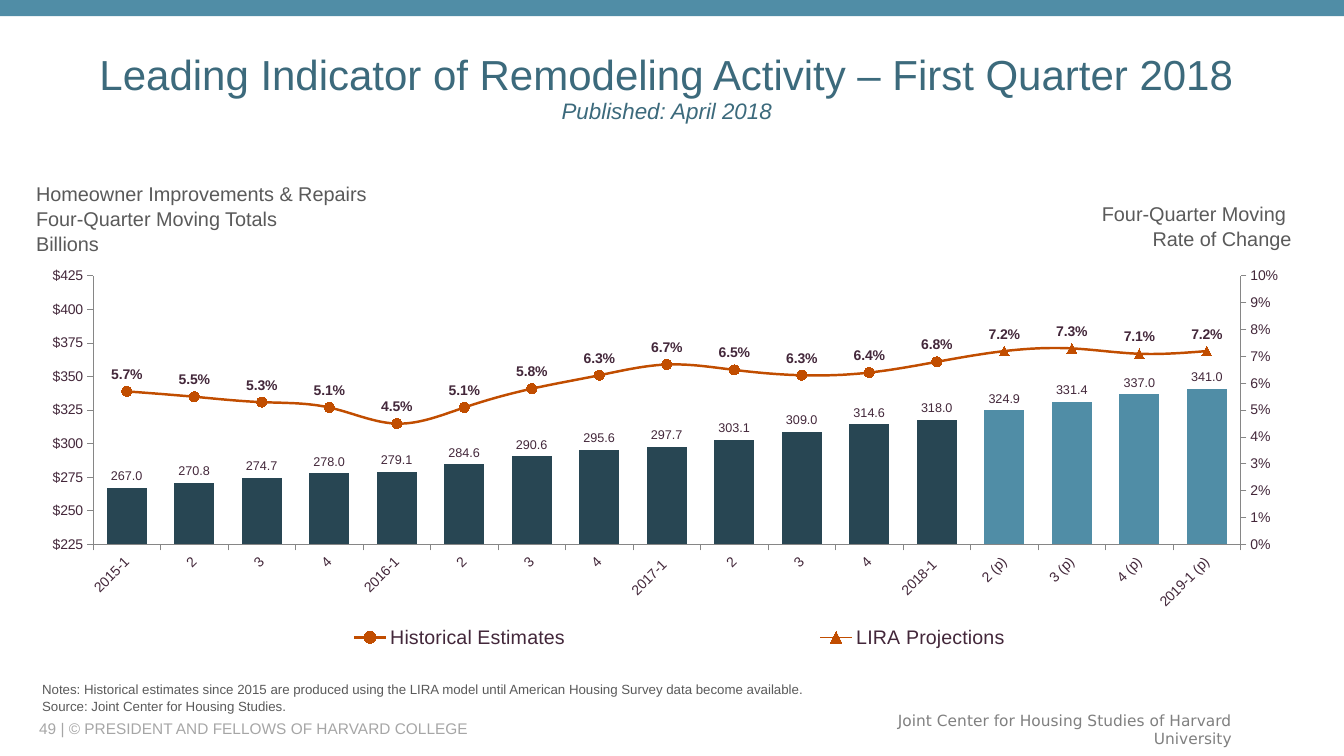
import copy
import dataclasses
import typing

import pptx
import pptx.chart.axis
import pptx.chart.chart
import pptx.chart.data
import pptx.dml.color
import pptx.enum.chart
import pptx.enum.shapes
import pptx.enum.text
import pptx.oxml
import pptx.oxml.ns
import pptx.slide
import pptx.text.text
import pptx.util

Pt = pptx.util.Pt
RGB = pptx.dml.color.RGBColor
qn = pptx.oxml.ns.qn
Align = pptx.enum.text.PP_ALIGN
Anchor = pptx.enum.text.MSO_ANCHOR
Mark = pptx.enum.chart.XL_MARKER_STYLE
Spot = pptx.enum.chart.XL_LABEL_POSITION

TEAL = RGB(0x50, 0x8D, 0xA6)
NAVY = RGB(0x28, 0x46, 0x53)
TITLE = RGB(0x3C, 0x6A, 0x7C)
RUST = RGB(0xC1, 0x4D, 0x00)
PLUM = RGB(0x43, 0x27, 0x3A)
SLATE = RGB(0x5A, 0x5A, 0x5A)
GRAY = RGB(0x80, 0x80, 0x80)
SILVER = RGB(0xA6, 0xA6, 0xA6)
AXIS = RGB(0x86, 0x86, 0x86)

QUARTERS = ["2015-1", "2", "3", "4", "2016-1", "2", "3", "4", "2017-1 ", "2", "3", "4",
            "2018-1 ", "2 (p)", "3 (p)", "4 (p)", "2019-1 (p)"]
TOTALS = [267, 270.8, 274.7, 278, 279.1, 284.6, 290.6, 295.6, 297.7, 303.1, 309, 314.6,
          318, 324.9, 331.4, 337, 341]
RATES = [0.057, 0.055, 0.053, 0.051, 0.045, 0.051, 0.058, 0.063, 0.067, 0.065, 0.063, 0.064,
         0.068, 0.072, 0.073, 0.071, 0.072]
PAST = 13
CHART_NS = 'xmlns:c="http://schemas.openxmlformats.org/drawingml/2006/chart"'


@dataclasses.dataclass
class Note:
    lines: list[str]
    left: float
    top: float
    width: float
    height: float
    size: float
    color: RGB = SLATE
    face: str = "Arial"
    align: Align = Align.LEFT
    anchor: Anchor = Anchor.TOP
    spacing: float = 1.05


NOTES = [
    Note(["49 | © PRESIDENT AND FELLOWS OF HARVARD COLLEGE"], 20.9, 513.4, 570, 14.4, 11,
         color=SILVER, anchor=Anchor.MIDDLE, spacing=1),
    Note(["Joint Center for Housing Studies of Harvard University"], 606.2, 510.5, 280.8, 20.9, 11,
         color=GRAY, face="DejaVu Sans", align=Align.RIGHT, anchor=Anchor.MIDDLE, spacing=1),
    Note(["Homeowner Improvements & Repairs", "Four-Quarter Moving Totals", "Billions"],
         18.7, 125.3, 355.7, 59, 14.2),
    Note(["Four-Quarter Moving ", "Rate of Change"], 709.2, 139.7, 220.3, 41.8, 14.2,
         align=Align.RIGHT),
    Note(["Notes: Historical estimates since 2015 are produced using the LIRA model until "
          "American Housing Survey data become available.",
          "Source: Joint Center for Housing Studies."], 23, 482.4, 820, 30.2, 9.5),
]


def style(font: pptx.text.text.Font, size: float, color: RGB = PLUM, face: str = "Arial",
          bold: bool = False, italic: bool = False) -> None:
    font.size, font.name, font.bold, font.italic = Pt(size), face, bold, italic
    font.color.rgb = color


def write(para: typing.Any, text: str, **form: typing.Any) -> None:
    run = para.add_run()
    run.text = text
    style(run.font, **form)


def add_note(slide: pptx.slide.Slide, note: Note) -> None:
    box = slide.shapes.add_textbox(Pt(note.left), Pt(note.top), Pt(note.width), Pt(note.height))
    frame = box.text_frame
    frame.word_wrap = True
    frame.vertical_anchor = note.anchor
    for i, line in enumerate(note.lines):
        para = frame.add_paragraph() if i else frame.paragraphs[0]
        para.alignment, para.line_spacing = note.align, note.spacing
        write(para, line, size=note.size, color=note.color, face=note.face)


def add_title(slide: pptx.slide.Slide) -> None:
    title = slide.shapes.title
    title.left, title.top, title.width, title.height = Pt(20.9), Pt(28.8), Pt(910.8), Pt(69.8)
    frame = title.text_frame
    frame.vertical_anchor = Anchor.MIDDLE
    para = frame.paragraphs[0]
    para.alignment, para.line_spacing = Align.CENTER, 0.9
    write(para, "Leading Indicator of Remodeling Activity – First Quarter 2018", size=30, color=TITLE)
    para.add_line_break()
    write(para, "Published: April 2018", size=16, color=TITLE, italic=True)


def place(parent: typing.Any, index: int, inner: bool, **box: float) -> None:
    for old in parent.findall(qn("c:layout")):
        parent.remove(old)
    target = '<c:layoutTarget val="inner"/>' if inner else ""
    modes = '<c:xMode val="edge"/><c:yMode val="edge"/>'
    sizes = "".join(f'<c:{key} val="{val}"/>' for key, val in box.items())
    parent.insert(index, pptx.oxml.parse_xml(
        f"<c:layout {CHART_NS}><c:manualLayout>{target}{modes}{sizes}</c:manualLayout></c:layout>"))


def set_scale(axis: pptx.chart.axis.ValueAxis, low: float, high: float, step: float,
              code: str) -> None:
    axis.minimum_scale, axis.maximum_scale, axis.major_unit = low, high, step
    axis.tick_labels.number_format = code
    axis.tick_labels.number_format_is_linked = False


def split_axes(chart: pptx.chart.chart.Chart) -> None:
    bars = chart.plots[0]._element
    cat, val = chart.category_axis._element, chart.value_axis._element
    cat_two, val_two = copy.deepcopy(cat), copy.deepcopy(val)
    for axis, own, cross in ((cat_two, "5001", "5002"), (val_two, "5002", "5001")):
        axis.find(qn("c:axId")).set("val", own)
        axis.find(qn("c:crossAx")).set("val", cross)
    val_two.find(qn("c:axPos")).set("val", "r")
    val_two.find(qn("c:crosses")).set("val", "max")
    val.addnext(cat_two)
    cat_two.addnext(val_two)
    pptx.chart.axis.CategoryAxis(cat_two).visible = False
    set_scale(pptx.chart.axis.ValueAxis(val_two), 0, 0.1, 0.01, "0%")
    lines = pptx.oxml.parse_xml(
        f'<c:lineChart {CHART_NS}><c:grouping val="standard"/><c:varyColors val="0"/>'
        '<c:marker val="1"/><c:axId val="5001"/><c:axId val="5002"/></c:lineChart>')
    for ser in bars.findall(qn("c:ser"))[1:]:
        for flag in ser.findall(qn("c:invertIfNegative")):
            ser.remove(flag)
        lines.find(qn("c:marker")).addprevious(ser)
    bars.addnext(lines)


def set_mark(marker: typing.Any, kind: Mark) -> None:
    marker.style, marker.size = kind, 7
    marker.format.fill.solid()
    marker.format.fill.fore_color.rgb = RUST
    marker.format.line.color.rgb = RUST


def add_labels(series: typing.Any, code: str, spot: Spot, **form: typing.Any) -> None:
    labels = series.data_labels
    labels.show_value = True
    labels.number_format, labels.number_format_is_linked = code, False
    labels.position = spot
    style(labels.font, **form)


def style_series(chart: pptx.chart.chart.Chart) -> None:
    columns, curves = chart.plots
    columns.gap_width, columns.vary_by_categories = 70, False
    totals = columns.series[0]
    totals.format.fill.solid()
    totals.format.fill.fore_color.rgb = NAVY
    for i in range(PAST, len(QUARTERS)):
        fill = totals.points[i].format.fill
        fill.solid()
        fill.fore_color.rgb = TEAL
    add_labels(totals, "#,##0.0", Spot.OUTSIDE_END, size=9)
    past, future = curves.series
    for series, kind, width in ((past, Mark.CIRCLE, 1.75), (future, Mark.TRIANGLE, 0.75)):
        series.smooth = True
        series.format.line.color.rgb = RUST
        series.format.line.width = Pt(width)
        set_mark(series.marker, kind)
    for i in range(len(QUARTERS)):
        if i < PAST:
            set_mark(future.points[i].marker, Mark.CIRCLE)
        else:
            past.points[i].marker.style = Mark.NONE
    add_labels(future, "0.0%", Spot.ABOVE, size=10, bold=True)


def add_graph(slide: pptx.slide.Slide) -> None:
    data = pptx.chart.data.CategoryChartData()
    data.categories = QUARTERS
    data.add_series("Series 1", TOTALS)
    data.add_series("Historical Estimates", RATES)
    data.add_series("LIRA Projections", RATES)
    kind = pptx.enum.chart.XL_CHART_TYPE.COLUMN_CLUSTERED
    chart = slide.shapes.add_chart(kind, Pt(20.9), Pt(185.8), Pt(910.8), Pt(282.2), data).chart
    chart.has_title = False
    style(chart.font, 12)
    for axis in (chart.category_axis, chart.value_axis):
        axis.has_major_gridlines = False
        axis.major_tick_mark = pptx.enum.chart.XL_TICK_MARK.OUTSIDE
        axis.format.line.color.rgb = AXIS
        style(axis.tick_labels.font, 10)
    set_scale(chart.value_axis, 225, 425, 25, '"$"#,##0')
    chart.category_axis._element.find(qn("c:txPr")).find(qn("a:bodyPr")).set("rot", "-2700000")
    split_axes(chart)
    style_series(chart)
    chart.has_legend = True
    legend = chart.legend
    legend.position = pptx.enum.chart.XL_LEGEND_POSITION.BOTTOM
    legend.include_in_layout = False
    style(legend.font, 14)
    legend._element.insert(1, pptx.oxml.parse_xml(
        f'<c:legendEntry {CHART_NS}><c:idx val="0"/><c:delete val="1"/></c:legendEntry>'))
    place(legend._element, 2, False, x=0.06, y=0.91, w=0.9, h=0.09)
    place(chart._chartSpace.chart.plotArea, 0, True, x=0.05, y=0.04, w=0.9, h=0.68)


def main() -> None:
    deck = pptx.Presentation()
    deck.slide_width, deck.slide_height = Pt(960), Pt(540)
    slide = deck.slides.add_slide(deck.slide_layouts[5])
    band = slide.shapes.add_shape(pptx.enum.shapes.MSO_SHAPE.RECTANGLE, 0, 0, Pt(960), Pt(11.5))
    band.shadow.inherit = False
    band.fill.solid()
    band.fill.fore_color.rgb = TEAL
    band.line.fill.background()
    add_title(slide)
    add_graph(slide)
    for note in NOTES:
        add_note(slide, note)
    deck.save("out.pptx")


if __name__ == "__main__":
    main()
